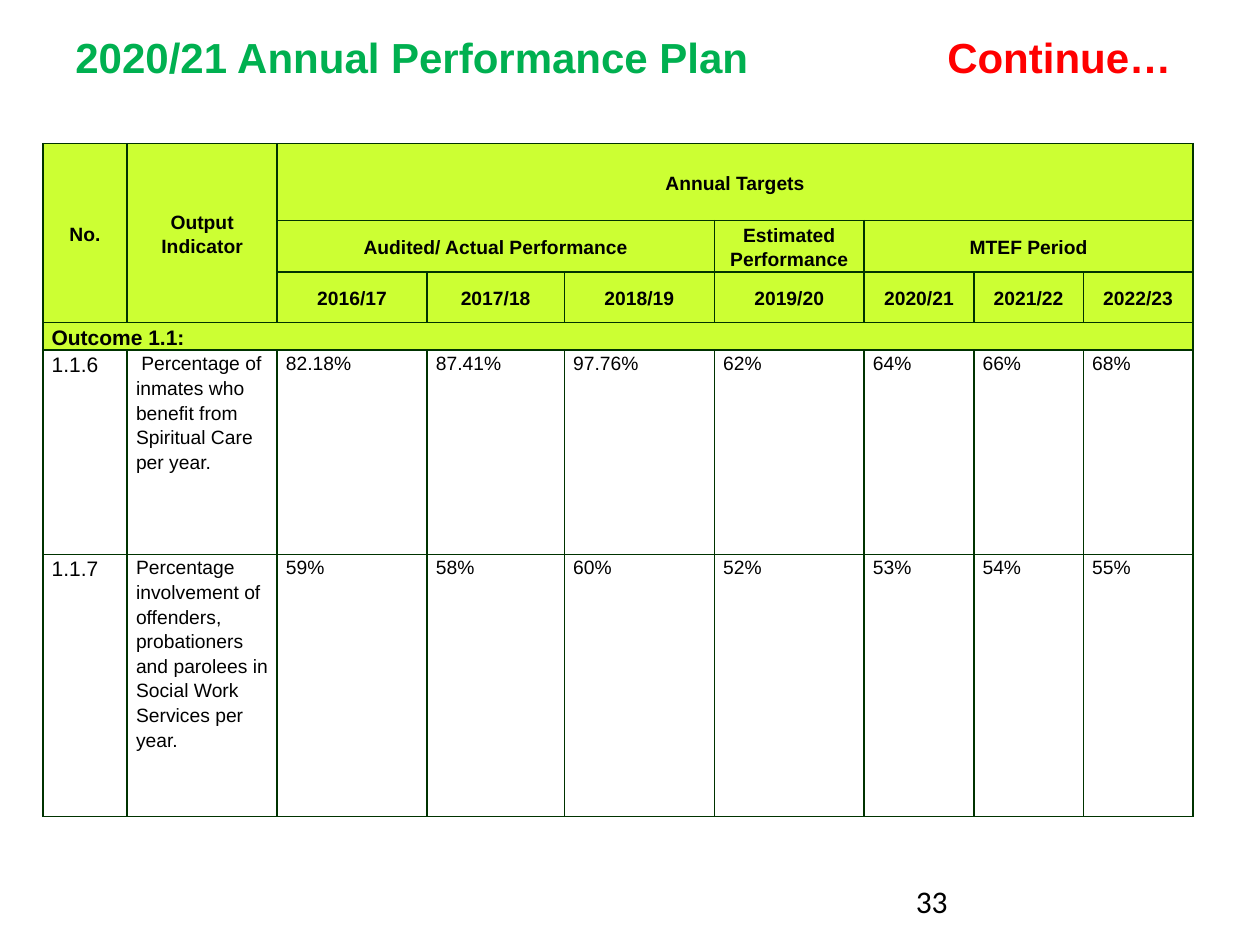
from dataclasses import dataclass

import pptx
import pptx.dml.color
import pptx.enum.text
import pptx.oxml.ns
import pptx.util
from lxml import etree

Inches = pptx.util.Inches
Pt = pptx.util.Pt
RGBColor = pptx.dml.color.RGBColor
Align = pptx.enum.text.PP_ALIGN
Anchor = pptx.enum.text.MSO_ANCHOR
qn = pptx.oxml.ns.qn

GREEN = RGBColor(0x00, 0xB0, 0x50)
RED = RGBColor(0xFF, 0x00, 0x00)
BLACK = RGBColor(0x00, 0x00, 0x00)
LIME = RGBColor(0xCC, 0xFF, 0x33)
EDGE = RGBColor(0x00, 0x33, 0x00)

COLS = [0.67, 1.19, 1.19, 1.09, 1.19, 1.19, 0.87, 0.87, 0.87]
ROWS = [0.61, 0.41, 0.4, 0.22, 1.62, 2.08]
BAND = 3  # row of the outcome heading


@dataclass
class Head:
    text: str
    row: int
    col: int
    rows: int = 1
    cols: int = 1


YEARS = ["2016/17", "2017/18", "2018/19", "2019/20", "2020/21", "2021/22", "2022/23"]
HEADS = [
    Head("No.", 0, 0, rows=3),
    Head("Output Indicator", 0, 1, rows=3),
    Head("Annual Targets", 0, 2, cols=7),
    Head("Audited/ Actual Performance", 1, 2, cols=3),
    Head("Estimated Performance", 1, 5),
    Head("MTEF Period", 1, 6, cols=3),
    *[Head(year, 2, col) for col, year in enumerate(YEARS, 2)],
    Head("Outcome 1.1:", BAND, 0, cols=9),
]
DATA = [
    ["1.1.6", "\N{NO-BREAK SPACE}Percentage of inmates who benefit from Spiritual Care per year.",
     "82.18%", "87.41%", "97.76%", "62%", "64%", "66%", "68%"],
    ["1.1.7", "Percentage involvement of offenders, probationers and parolees "
     "in Social Work Services per year.",
     "59%", "58%", "60%", "52%", "53%", "54%", "55%"],
]


def add_run(para, text: str, size: float, color: RGBColor,
            bold: bool = False, face: str = "Arial") -> None:
    run = para.add_run()
    run.text = text
    run.font.size = Pt(size)
    run.font.name = face
    run.font.bold = bold
    run.font.color.rgb = color


def add_box(slide, left: float, top: float, width: float, height: float):
    """Add a wrapping text box and return its first paragraph."""
    box = slide.shapes.add_textbox(Inches(left), Inches(top), Inches(width), Inches(height))
    box.text_frame.word_wrap = True
    return box.text_frame.paragraphs[0]


def add_tab(para, pos: float) -> None:
    tabs = etree.SubElement(para._p.get_or_add_pPr(), qn("a:tabLst"))
    etree.SubElement(tabs, qn("a:tab"), pos=str(Inches(pos)), algn="l")


def style_cell(cell, row: int) -> None:
    """Set borders, fill, margins and alignment by the row's role."""
    props = cell._tc.get_or_add_tcPr()
    for side in ("lnL", "lnR", "lnT", "lnB"):
        line = etree.SubElement(props, qn(f"a:{side}"), w=str(Pt(1)))
        fill = etree.SubElement(line, qn("a:solidFill"))
        etree.SubElement(fill, qn("a:srgbClr"), val=str(EDGE))
    if row <= BAND:
        cell.fill.solid()
        cell.fill.fore_color.rgb = LIME
    else:
        cell.fill.background()
    cell.margin_left = cell.margin_right = Inches(0.07)
    cell.margin_top = cell.margin_bottom = 0
    para = cell.text_frame.paragraphs[0]
    para.line_spacing = 1.15
    if row < BAND:
        cell.vertical_anchor = Anchor.MIDDLE
        para.alignment = Align.CENTER


def fill_cell(cell, text: str, size: float, bold: bool = False) -> None:
    add_run(cell.text_frame.paragraphs[0], text, size, BLACK, bold)


def add_plan(slide) -> None:
    frame = slide.shapes.add_table(len(ROWS), len(COLS), Inches(0.34), Inches(1.14),
                                   Inches(sum(COLS)), Inches(sum(ROWS)))
    table = frame.table
    table.first_row = table.horz_banding = False
    for col, width in zip(table.columns, COLS):
        col.width = Inches(width)
    for num, height in enumerate(ROWS):
        table.rows[num].height = Inches(height)
        for cell in table.rows[num].cells:
            style_cell(cell, num)
    for head in HEADS:
        cell = table.cell(head.row, head.col)
        if head.rows * head.cols > 1:
            cell.merge(table.cell(head.row + head.rows - 1, head.col + head.cols - 1))
        fill_cell(cell, head.text, 12 if head.row == BAND else 11, bold=True)
    for row, texts in enumerate(DATA, BAND + 1):
        for col, text in enumerate(texts):
            fill_cell(table.cell(row, col), text, 11 if col else 12)
    for cell in table.iter_cells():
        if cell.is_spanned:  # keeps covered cells from stretching their rows
            para = cell.text_frame.paragraphs[0]
            etree.SubElement(para._p, qn("a:endParaRPr"), sz="1100")


def main() -> None:
    deck = pptx.Presentation()
    deck.slide_width, deck.slide_height = Inches(10), Inches(7.5)
    slide = deck.slides.add_slide(deck.slide_layouts[6])
    add_plan(slide)
    title = add_box(slide, 0.5, 0.2, 9, 0.5)
    add_tab(title, 6.92)
    add_run(title, "2020/21 Annual Performance Plan\t", 24, GREEN, bold=True)
    add_run(title, "Continue…", 24, RED, bold=True)
    page = add_box(slide, 7.17, 6.95, 2.33, 0.4)
    add_run(page, "33", 18, BLACK, face="Calibri")
    deck.save("out.pptx")


if __name__ == "__main__":
    main()
